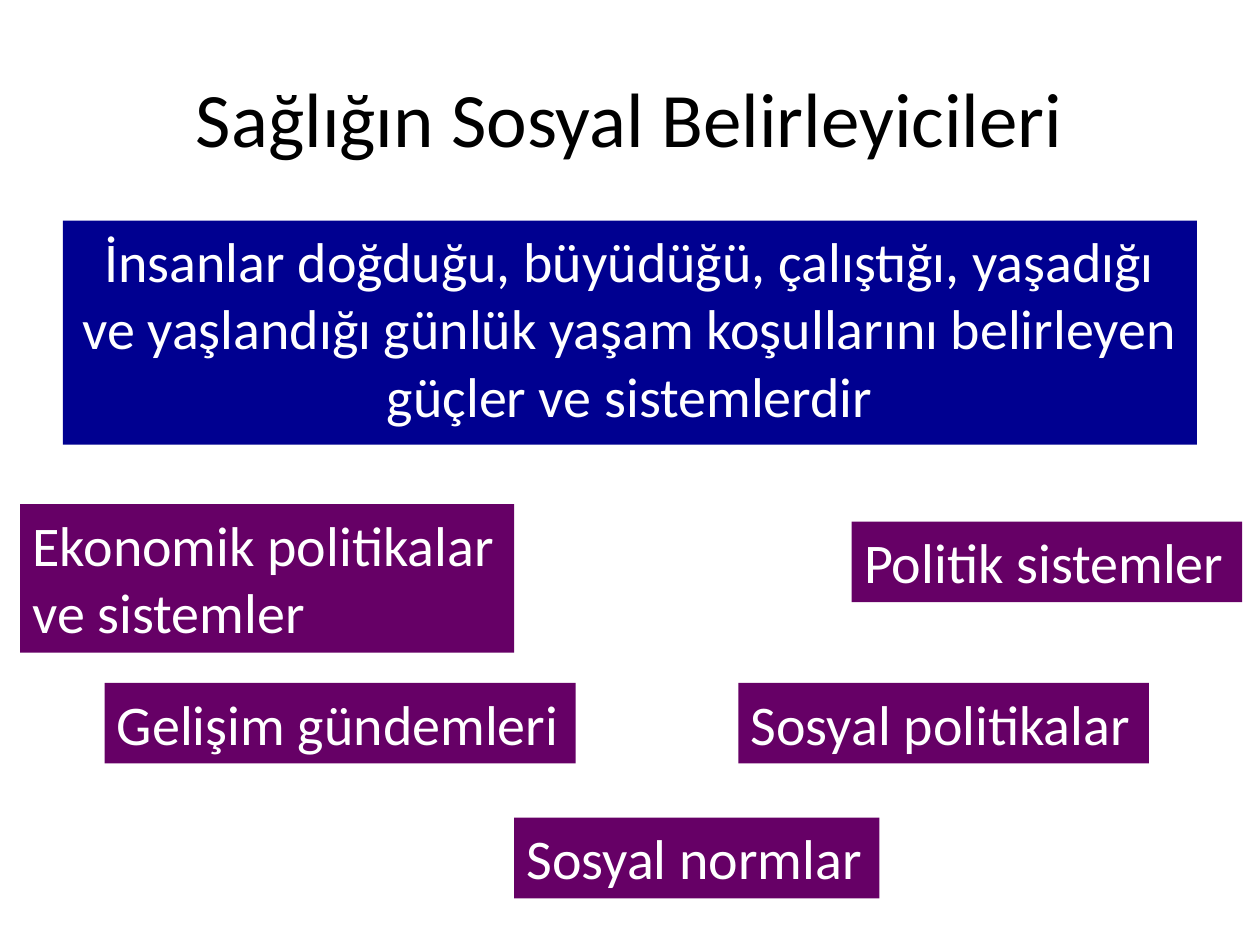
from pptx import Presentation
from pptx.dml.color import RGBColor
from pptx.enum.text import MSO_ANCHOR, MSO_AUTO_SIZE, PP_ALIGN
from pptx.util import Inches, Pt

COLORS = {"black": "000000", "white": "FFFFFF", "navy": "000090", "plum": "660066"}
FONT = "Calibri"

TOPICS = [
    ("Ekonomik politikalar\nve sistemler", (0.16, 4, 3.92, 1.18)),
    ("Gelişim gündemleri", (0.83, 5.42, 3.74, 0.64)),
    ("Sosyal normlar", (4.08, 6.49, 2.9, 0.64)),
    ("Sosyal politikalar", (5.86, 5.42, 3.26, 0.64)),
    ("Politik sistemler", (6.76, 4.14, 3.1, 0.64)),
]


def add_text(slide, box, text, size, color, align, fill=None):
    """Add a text box, filled if a fill is named, and return it."""
    shape = slide.shapes.add_textbox(*[Inches(n) for n in box])
    if fill:
        shape.fill.solid()
        shape.fill.fore_color.rgb = RGBColor.from_string(COLORS[fill])
    frame = shape.text_frame
    frame.word_wrap = True
    frame.text = text
    for para in frame.paragraphs:
        para.alignment = align
        for run in para.runs:
            run.font.name = FONT
            run.font.size = Pt(size)
            run.font.color.rgb = RGBColor.from_string(COLORS[color])
    return shape


def add_title(slide, box, text):
    title = add_text(slide, box, text, 44, "black", PP_ALIGN.CENTER)
    title.text_frame.vertical_anchor = MSO_ANCHOR.MIDDLE


def add_banner(slide, box, text):
    add_text(slide, box, text, 32, "white", PP_ALIGN.CENTER, "navy")


def add_topic(slide, box, text):
    topic = add_text(slide, box, text, 32, "white", PP_ALIGN.LEFT, "plum")
    topic.text_frame.word_wrap = False
    topic.text_frame.auto_size = MSO_AUTO_SIZE.SHAPE_TO_FIT_TEXT


def main():
    deck = Presentation()
    deck.slide_width, deck.slide_height = Inches(10), Inches(7.5)
    slide = deck.slides.add_slide(deck.slide_layouts[6])
    add_title(slide, (0.5, 0.3, 9, 1.25), "Sağlığın Sosyal Belirleyicileri")
    add_banner(
        slide,
        (0.5, 1.75, 9, 1.78),
        "İnsanlar doğduğu, büyüdüğü, çalıştığı, yaşadığı ve yaşlandığı "
        "günlük yaşam koşullarını belirleyen güçler ve sistemlerdir",
    )
    for text, box in TOPICS:
        add_topic(slide, box, text)
    deck.save("out.pptx")


if __name__ == "__main__":
    main()
